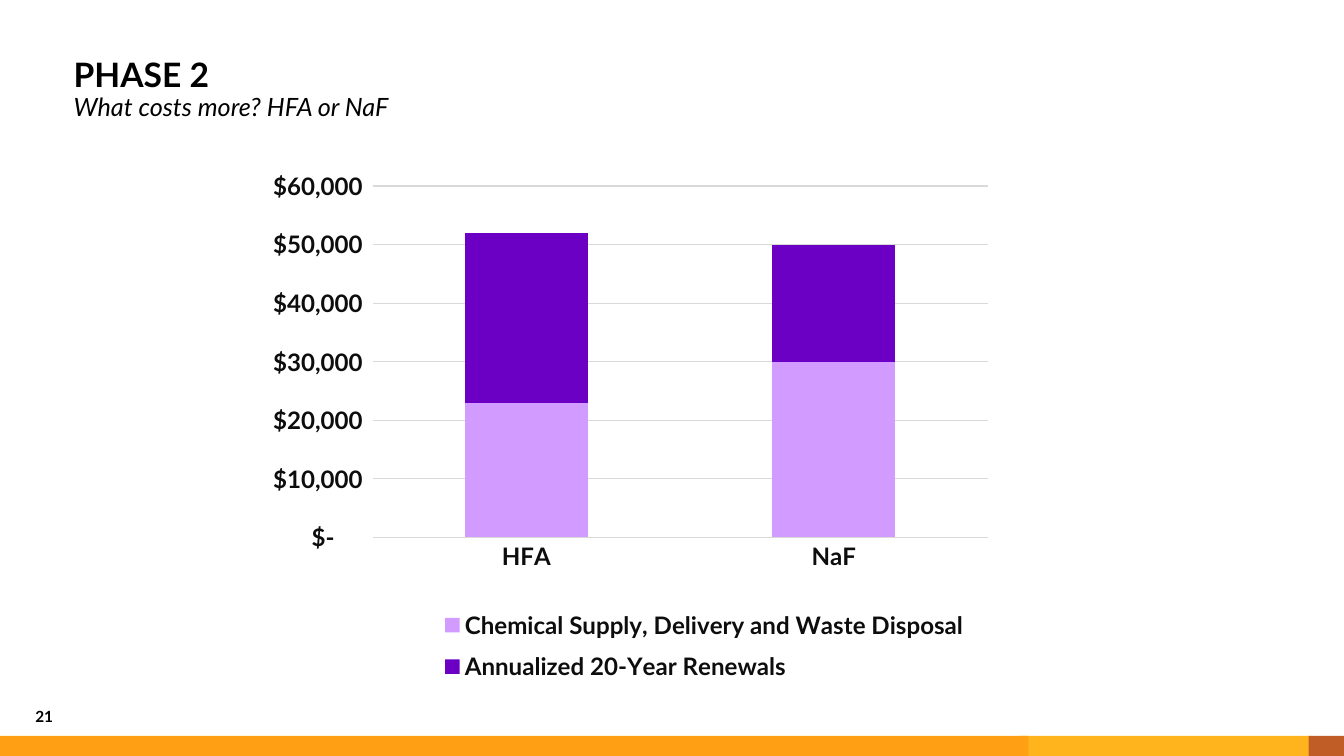
from pptx import Presentation
from pptx.chart.data import CategoryChartData
from pptx.dml.color import RGBColor
from pptx.enum.chart import XL_CHART_TYPE, XL_LEGEND_POSITION, XL_TICK_MARK
from pptx.enum.shapes import MSO_SHAPE
from pptx.enum.text import MSO_ANCHOR
from pptx.oxml import parse_xml
from pptx.oxml.ns import nsdecls
from pptx.util import Pt

PX = 9144  # 100 px to the inch
FACE = "Lato"
BLACK = RGBColor(0x00, 0x00, 0x00)
INK = RGBColor(0x0D, 0x0D, 0x0D)
GRID = RGBColor(0xD9, 0xD9, 0xD9)
AMBER = RGBColor(0xFF, 0xB4, 0x1E)
RUST = RGBColor(0xC0, 0x5D, 0x27)
ORANGE = RGBColor(0xFF, 0xA0, 0x14)
LILAC = RGBColor(0xD2, 0x9B, 0xFF)
PURPLE = RGBColor(0x6B, 0x00, 0xC4)
MONEY = r'_("$"* #,##0_);_("$"* \(#,##0\);_("$"* "-"??_);_(@_)'
LABEL = {"size": Pt(17.2), "bold": True}


def style(font, color, **form):
    font.color.rgb = color
    for name, value in {"name": FACE, **form}.items():
        setattr(font, name, value)


def place(host, x, y, w, h, inner=False):
    """Set a manual layout, as shares of the chart's size."""
    for old in host.findall("{*}layout"):
        host.remove(old)
    target = '<c:layoutTarget val="inner"/>' if inner else ""
    modes = "".join(f'<c:{k}Mode val="edge"/>' for k in "xy")
    sizes = "".join(f'<c:{k} val="{v}"/>' for k, v in zip("xywh", (x, y, w, h)))
    layout = parse_xml(
        f'<c:layout {nsdecls("c")}><c:manualLayout>{target}{modes}{sizes}'
        "</c:manualLayout></c:layout>"
    )
    host.insert(0 if inner else 1, layout)


deck = Presentation()
deck.slide_width, deck.slide_height = 1333 * PX, 750 * PX
slide = deck.slides.add_slide(deck.slide_layouts[6])
shapes = slide.shapes

# Footer bands
for left, width, color in ((1011, 290, AMBER), (1298, 35, RUST), (0, 1020, ORANGE)):
    band = shapes.add_shape(
        MSO_SHAPE.RECTANGLE, left * PX, 730 * PX, width * PX, 20 * PX
    )
    band.shadow.inherit = False
    band.fill.solid()
    band.fill.fore_color.rgb = color
    band.line.fill.background()

# Page number and title
texts = (
    ((35, 690, 85, 30), MSO_ANCHOR.BOTTOM, 1.0,
     [("21", {"size": Pt(11), "bold": True})]),
    ((73, 55, 1260, 70), MSO_ANCHOR.MIDDLE, 0.9,
     [("PHASE 2", {"size": Pt(24), "bold": True}),
      ("What costs more? HFA or NaF", {"size": Pt(18), "italic": True})]),
)
for area, anchor, space, lines in texts:
    frame = shapes.add_textbox(*(n * PX for n in area)).text_frame
    form = {"word_wrap": True, "vertical_anchor": anchor, "margin_left": 0,
            "margin_right": 0, "margin_top": 0, "margin_bottom": 0}
    for name, value in form.items():
        setattr(frame, name, value)
    para = frame.paragraphs[0]
    para.line_spacing = space
    for i, (words, look) in enumerate(lines):
        if i:
            para.add_line_break()
        run = para.add_run()
        run.text = words
        style(run.font, BLACK, **look)

# Cost chart
data = CategoryChartData(number_format=MONEY)
data.categories = ["HFA", "NaF"]
data.add_series("Chemical Supply, Delivery and Waste Disposal", (23000, 30000))
data.add_series("Annualized 20-Year Renewals", (29000, 20000))
chart = shapes.add_chart(
    XL_CHART_TYPE.COLUMN_STACKED, 265 * PX, 168 * PX, 803 * PX, 553 * PX, data
).chart
chart.has_title = False
style(chart.font, INK, **LABEL)

plot = chart.plots[0]
for name, value in {"gap_width": 150, "overlap": 100, "vary_by_categories": False}.items():
    setattr(plot, name, value)
for series, color in zip(plot.series, (LILAC, PURPLE)):
    series.format.fill.solid()
    series.format.fill.fore_color.rgb = color

# Axes
cats, costs = chart.category_axis, chart.value_axis
for axis in (cats, costs):
    axis.major_tick_mark = axis.minor_tick_mark = XL_TICK_MARK.NONE
    style(axis.tick_labels.font, INK, **LABEL)
for name, value in {"minimum_scale": 0, "maximum_scale": 60000, "major_unit": 10000,
                    "has_major_gridlines": True}.items():
    setattr(costs, name, value)
costs.tick_labels.number_format = MONEY
costs.tick_labels.number_format_is_linked = False
costs.format.line.fill.background()
for line in (cats.format.line, costs.major_gridlines.format.line):
    line.color.rgb = GRID
    line.width = Pt(0.75)

# Legend and plot position
chart.has_legend = True
legend = chart.legend
legend.position = XL_LEGEND_POSITION.BOTTOM
legend.include_in_layout = False
style(legend.font, INK, **LABEL)
area = chart.element.find(".//{*}plotArea")
place(area, 0.13, 0.03, 0.76, 0.63, inner=True)
place(chart.element.find(".//{*}legend"), 0.16, 0.77, 0.76, 0.17)

deck.save("out.pptx")
